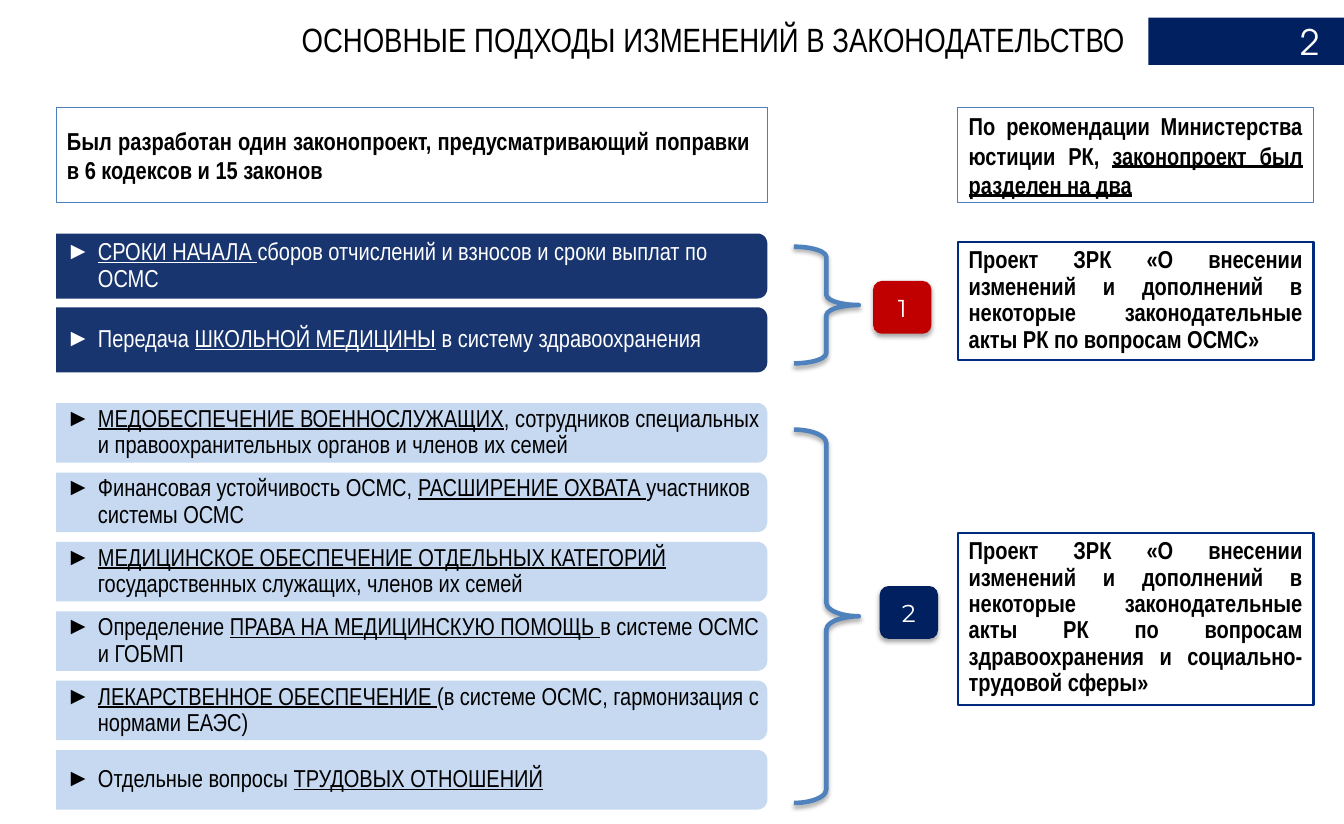
from math import cos, pi, sin

from lxml import etree
from pptx import Presentation
from pptx.dml.color import RGBColor
from pptx.enum.shapes import MSO_SHAPE
from pptx.enum.text import MSO_ANCHOR, MSO_AUTO_SIZE, PP_ALIGN
from pptx.oxml.ns import qn
from pptx.util import Emu, Inches, Pt

RECT, ROUNDED, BRACE = MSO_SHAPE.RECTANGLE, MSO_SHAPE.ROUNDED_RECTANGLE, MSO_SHAPE.RIGHT_BRACE
TOP, MIDDLE = MSO_ANCHOR.TOP, MSO_ANCHOR.MIDDLE
LEFT, RIGHT, CENTER, JUSTIFY = PP_ALIGN.LEFT, PP_ALIGN.RIGHT, PP_ALIGN.CENTER, PP_ALIGN.JUSTIFY
GROW = MSO_AUTO_SIZE.SHAPE_TO_FIT_TEXT

# Content: each text is a list of runs, (words, underlined)
TITLE = [("ОСНОВНЫЕ ПОДХОДЫ ИЗМЕНЕНИЙ В ЗАКОНОДАТЕЛЬСТВО", False)]
PAGE = [("2", False)]
HEAD_LEFT = [("Был разработан один законопроект, предусматривающий поправки \nв 6 кодексов и 15 законов", False)]
HEAD_RIGHT = [("По рекомендации Министерства юстиции РК, ", False),
              ("законопроект был разделен на два", True)]
DRAFT = "Проект ЗРК «О внесении изменений и дополнений в некоторые законодательные акты РК по вопросам "
TOPICS_1 = [
    [("СРОКИ НАЧАЛА ", True), ("сборов отчислений и взносов и сроки выплат по ОСМС", False)],
    [("Передача ", False), ("ШКОЛЬНОЙ МЕДИЦИНЫ", True), (" в систему здравоохранения", False)],
]
TOPICS_2 = [
    [("МЕДОБЕСПЕЧЕНИЕ ВОЕННОСЛУЖАЩИХ", True),
     (", сотрудников специальных и правоохранительных органов и членов их семей", False)],
    [("Финансовая устойчивость ОСМС, ", False), ("РАСШИРЕНИЕ ОХВАТА ", True),
     ("участников системы ОСМС", False)],
    [("МЕДИЦИНСКОЕ ОБЕСПЕЧЕНИЕ ОТДЕЛЬНЫХ КАТЕГОРИЙ ", True),
     ("государственных служащих, членов их семей", False)],
    [("Определение ", False), ("ПРАВА НА МЕДИЦИНСКУЮ ПОМОЩЬ ", True),
     ("в системе ОСМС и ГОБМП", False)],
    [("ЛЕКАРСТВЕННОЕ ОБЕСПЕЧЕНИЕ ", True), ("(в системе ОСМС, гармонизация с нормами ЕАЭС)", False)],
    [("Отдельные вопросы ", False), ("ТРУДОВЫХ ОТНОШЕНИЙ", True)],
]

# Theme: colours, fonts, sizes
THEME = {
    "navy": "002060", "red": "C00000", "pale": "C6D9F1", "white": "FFFFFF", "black": "000000",
    "frame": "4B7EBC", "draft": "002A7E", "brace": "4F81BD",
    "body": ("Arial Narrow", 16), "title": ("Arial Narrow", 22),
    "page": ("TeX Gyre Adventor", 22.9), "badge": ("Montserrat", 16),
}

# Slide size, then a grid in inches: (left, width) of columns
SLIDE_W, SLIDE_H = Emu(11161713), Emu(6840538)
COL_TOPICS, COL_BRACE, COL_DRAFTS = (0.51, 6.46), (7.21, 0.59), (8.7, 3.23)
BADGE_W, BADGE_H = 0.53, 0.48
CORNER, INDENT = 0.09, 0.29
HEAD_Y, HEAD_H = 0.98, 0.86

# One block per draft law: topics on the left, a brace, a badge, the draft's name
BLOCKS = [
    dict(topics=TOPICS_1, top=2.12, row=0.59, pitch=0.67, fill="navy", alpha=90, ink="white",
         brace=(2.24, 1.06, 0.159), badge=("1", 7.93, 2.55, "red"),
         draft=(DRAFT + "ОСМС» ", 2.2, 1.07)),
    dict(topics=TOPICS_2, top=3.66, row=0.54, pitch=0.63, fill="pale", alpha=100, ink="black",
         brace=(3.9, 3.39, 0.209), badge=("2", 7.99, 5.32, "navy"),
         draft=(DRAFT + "здравоохранения и социально-трудовой сферы»", 4.84, 1.56)),
]


def color(name):
    return RGBColor.from_string(THEME[name])


def sub(parent, tag, **attrs):
    return etree.SubElement(parent, qn(tag), {k: str(v) for k, v in attrs.items()})


def paint(sp, fill=None, line=None, width=0.75, alpha=100, shadow=False):
    sp.shadow.inherit = False
    if fill:
        sp.fill.solid()
        sp.fill.fore_color.rgb = color(fill)
        if alpha < 100:
            clr = sp._element.spPr.find(qn("a:solidFill"))[0]
            sub(clr, "a:alpha", val=alpha * 1000)
    else:
        sp.fill.background()
    if line:
        sp.line.color.rgb = color(line)
        sp.line.width = Pt(width)
    else:
        sp.line.fill.background()
    if shadow:
        effects = sp._element.spPr.find(qn("a:effectLst"))
        outer = sub(effects, "a:outerShdw", blurRad=Pt(3.1), dist=Pt(1.8), dir=5400000, rotWithShape=0)
        sub(sub(outer, "a:srgbClr", val=THEME["black"]), "a:alpha", val=35000)


def write(sp, runs, style="body", ink="black", bold=False, align=LEFT, anchor=MIDDLE,
          spacing=1.0, insets=(0.1, 0.05, 0.1, 0.05), auto_size=MSO_AUTO_SIZE.NONE):
    tf = sp.text_frame
    sides = ("margin_left", "margin_top", "margin_right", "margin_bottom")
    frame = dict(zip(sides, map(Inches, insets)), word_wrap=True, vertical_anchor=anchor,
                 auto_size=auto_size)
    for key, value in frame.items():
        setattr(tf, key, value)
    p = tf.paragraphs[0]
    p.alignment, p.line_spacing = align, spacing
    name, size = THEME[style]
    for words, underlined in runs:
        for i, part in enumerate(words.split("\n")):
            if i:
                p.add_line_break()
            r = p.add_run()
            r.text = part
            look = dict(name=name, size=Pt(size), bold=bold, underline=underlined)
            for key, value in look.items():
                setattr(r.font, key, value)
            r.font.color.rgb = color(ink)
    return p


def add(shapes, kind, x, y, w, h, **look):
    sp = shapes.add_shape(kind, *map(Inches, (x, y, w, h)))
    paint(sp, **look)
    return sp


def add_card(shapes, x, y, w, h, **look):
    """Bar with square left corners and rounded right corners."""
    arc = [(CORNER * sin(a * pi / 16), CORNER * cos(a * pi / 16)) for a in range(9)]
    right = x + w - CORNER
    upper = [(right + dx, y + CORNER - dy) for dx, dy in arc]
    lower = [(right + dx, y + h - CORNER + dy) for dx, dy in reversed(arc)]
    fb = shapes.build_freeform(Inches(x), Inches(y))
    fb.add_line_segments([(Inches(a), Inches(b)) for a, b in upper + lower + [(x, y + h)]])
    sp = fb.convert_to_shape()
    paint(sp, **look)
    return sp


def add_bullet(p, ink):
    pPr = p._p.get_or_add_pPr()
    pPr.set("marL", str(Inches(INDENT)))
    pPr.set("indent", str(-Inches(INDENT)))
    sub(sub(pPr, "a:buClr"), "a:srgbClr", val=THEME[ink])
    sub(pPr, "a:buFont", typeface="Arial")
    sub(pPr, "a:buChar", char="►")


def add_block(shapes, b):
    for i, runs in enumerate(b["topics"]):
        card = add_card(shapes, COL_TOPICS[0], b["top"] + i * b["pitch"], COL_TOPICS[1], b["row"],
                        fill=b["fill"], alpha=b["alpha"])
        p = write(card, runs, ink=b["ink"], spacing=0.9, insets=(0.09, 0.03, 0.03, 0.03))
        add_bullet(p, b["ink"])

    y, h, curve = b["brace"]
    brace = add(shapes, BRACE, COL_BRACE[0], y, COL_BRACE[1], h, line="brace", width=3, shadow=True)
    brace.adjustments[0] = curve

    number, x, y, fill = b["badge"]
    badge = add(shapes, ROUNDED, x, y, BADGE_W, BADGE_H, fill=fill, shadow=True)
    write(badge, [(number, False)], style="badge", ink="white", align=CENTER)

    name, y, h = b["draft"]
    draft = add(shapes, RECT, COL_DRAFTS[0], y, COL_DRAFTS[1], h, line="draft", width=1.5)
    write(draft, [(name, False)], bold=True, align=JUSTIFY, anchor=TOP, spacing=0.9, auto_size=GROW)


def main():
    prs = Presentation()
    prs.slide_width, prs.slide_height = SLIDE_W, SLIDE_H
    shapes = prs.slides.add_slide(prs.slide_layouts[6]).shapes

    # Title and page number
    add(shapes, RECT, 10.43, 0.16, SLIDE_W.inches - 10.43, 0.43, fill="navy")
    page = shapes.add_textbox(*map(Inches, (10.44, 0.17, 1.64, 0.42)))
    write(page, PAGE, style="page", ink="white", align=RIGHT, insets=(0.09, 0.05, 0.09, 0.05))
    title = shapes.add_textbox(*map(Inches, (1.24, 0.12, 9.07, 0.47)))
    write(title, TITLE, style="title", align=RIGHT, anchor=TOP, auto_size=GROW)

    # Column headings
    for (x, w), runs in ((COL_TOPICS, HEAD_LEFT), (COL_DRAFTS, HEAD_RIGHT)):
        head = add(shapes, RECT, x, HEAD_Y, w, HEAD_H, line="frame")
        write(head, runs, bold=True, align=JUSTIFY)

    # Two draft laws
    for block in BLOCKS:
        add_block(shapes, block)

    prs.save("out.pptx")


if __name__ == "__main__":
    main()
